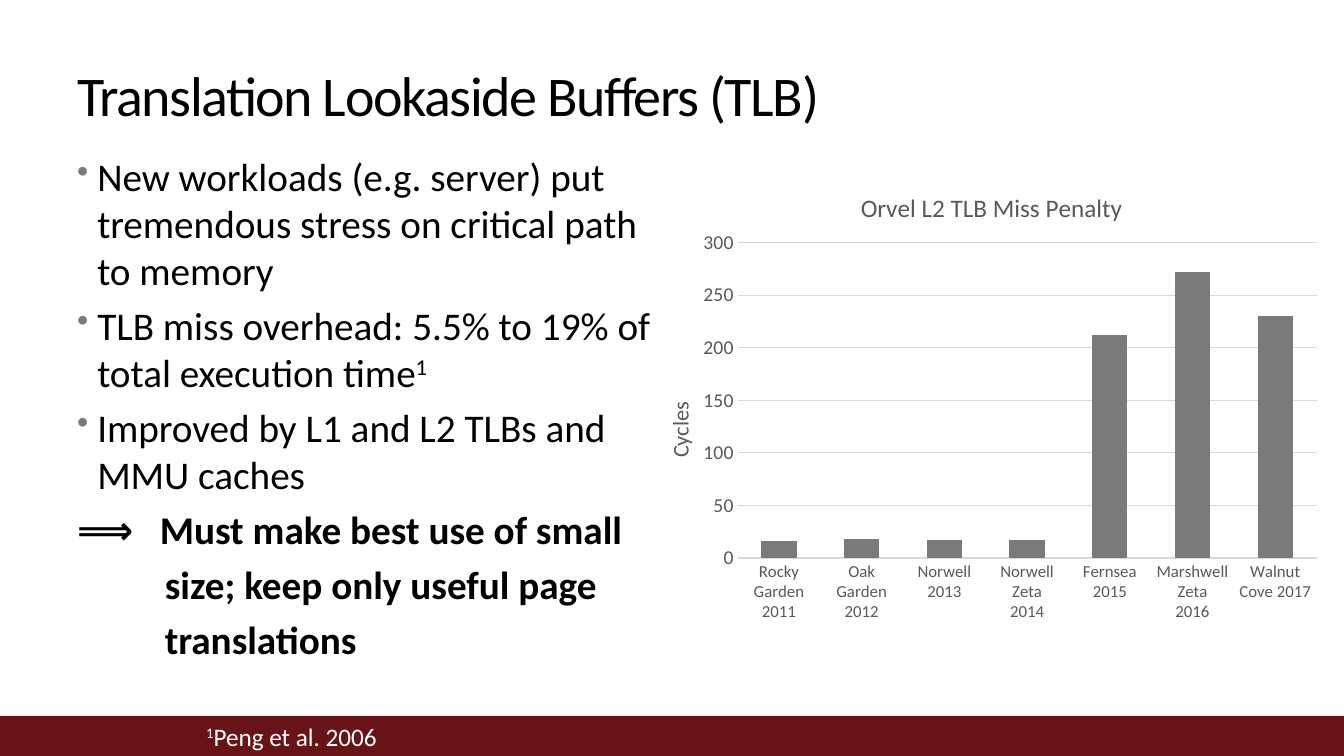
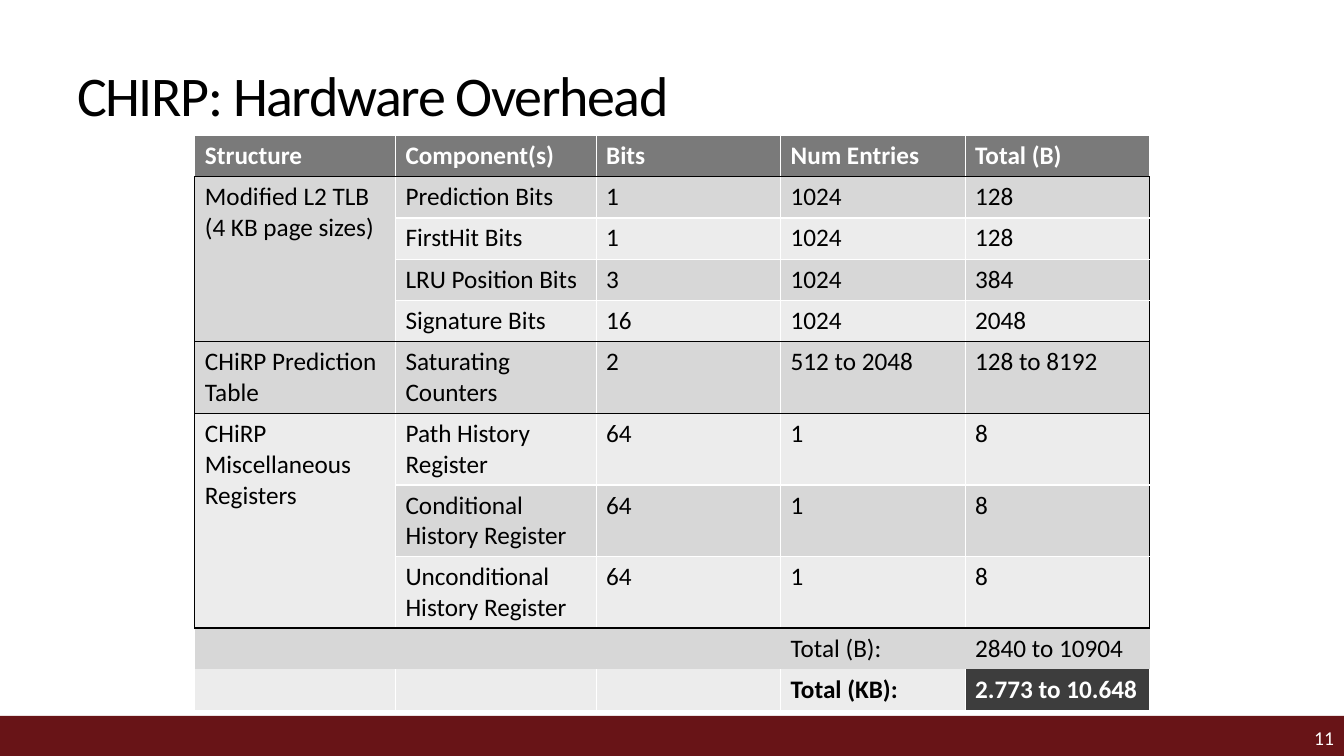
from dataclasses import dataclass

from lxml import etree
from pptx import Presentation
from pptx.chart.data import CategoryChartData
from pptx.dml.color import RGBColor
from pptx.enum.chart import XL_CHART_TYPE, XL_TICK_MARK
from pptx.enum.shapes import MSO_SHAPE
from pptx.enum.text import MSO_ANCHOR, PP_ALIGN
from pptx.oxml.ns import qn
from pptx.util import Inches, Pt

COLUMNS = XL_CHART_TYPE.COLUMN_CLUSTERED
NO_TICK = XL_TICK_MARK.NONE
RECTANGLE = MSO_SHAPE.RECTANGLE
TOP, MIDDLE = MSO_ANCHOR.TOP, MSO_ANCHOR.MIDDLE
LEFT, RIGHT = PP_ALIGN.LEFT, PP_ALIGN.RIGHT
PLAIN_TABLE = "{2D5ABB26-0587-4C30-8999-92F81FD0307C}"


@dataclass(frozen=True)
class Theme:
    font: str = "Calibri"
    ink: str = "000000"
    paper: str = "FFFFFF"
    band: str = "681417"
    grey: str = "7A7A7A"
    dark: str = "3D3D3D"
    stripes: tuple = ("ECECEC", "D7D7D7")
    chart_text: str = "595959"
    chart_line: str = "D9D9D9"
    title_size: int = 40
    body_size: int = 28
    text_size: int = 18
    axis_title_size: int = 16
    value_size: int = 14
    category_size: int = 12


def rgb(value):
    return RGBColor.from_string(value)


def child(parent, tag, **attributes):
    return etree.SubElement(parent, qn(tag), attributes)


class Deck:
    """Style and current slide; positions are percentages of the slide."""

    def __init__(self, theme):
        self.theme = theme
        self.prs = Presentation()
        self.prs.slide_width, self.prs.slide_height = Inches(13.33), Inches(7.5)
        self.slide = None

    def x(self, percent):
        return int(self.prs.slide_width * percent / 100)

    def y(self, percent):
        return int(self.prs.slide_height * percent / 100)

    def frame(self, left, top, width, height):
        return self.x(left), self.y(top), self.x(width), self.y(height)

    def style(self, font, size, color, bold=False):
        font.name, font.size, font.bold = self.theme.font, Pt(size), bold
        font.color.rgb = rgb(color)

    def new_slide(self, title):
        self.slide = self.prs.slides.add_slide(self.prs.slide_layouts[6])
        band = self.slide.shapes.add_shape(RECTANGLE, *self.frame(0, 94.7, 100, 5.3))
        band.shadow.inherit = False
        band.fill.solid()
        band.fill.fore_color.rgb = rgb(self.theme.band)
        band.line.fill.background()
        heading = self.text((5, 5, 92.5, 15), title, self.theme.title_size,
                            self.theme.ink, MIDDLE)
        heading.runs[0].font._element.set("spc", "-100")

    def text_frame(self, place, anchor):
        text_frame = self.slide.shapes.add_textbox(*self.frame(*place)).text_frame
        text_frame.word_wrap = True
        text_frame.vertical_anchor = anchor
        return text_frame

    def add_parts(self, paragraph, parts, size, color, bold=False):
        """Parts are plain strings, or one-item tuples for superscripts."""
        for part in parts:
            raised = isinstance(part, tuple)
            run = paragraph.add_run()
            run.text = part[0] if raised else part
            self.style(run.font, size, color, bold)
            if raised:
                run.font._element.set("baseline", "30000")

    def text(self, place, text, size, color, anchor=TOP, align=LEFT):
        paragraph = self.text_frame(place, anchor).paragraphs[0]
        paragraph.alignment = align
        self.add_parts(paragraph, [text] if isinstance(text, str) else text, size, color)
        return paragraph

    def footer(self, place, text, size, align=LEFT):
        self.text(place, text, size, self.theme.paper, MIDDLE, align)

    # Body text: bulleted points, then a bold conclusion after an arrow
    def body(self, place, points, conclusion):
        theme = self.theme
        text_frame = self.text_frame(place, TOP)
        for i, parts in enumerate(points + conclusion):
            paragraph = text_frame.add_paragraph() if i else text_frame.paragraphs[0]
            properties = paragraph._p.get_or_add_pPr()
            concluding = i >= len(points)
            if not concluding:
                properties.set("marL", str(Inches(0.2)))
                properties.set("indent", str(-Inches(0.2)))
                child(child(properties, "a:buClr"), "a:srgbClr", val=theme.grey)
                child(properties, "a:buSzPct", val="85000")
                child(properties, "a:buChar", char="•")
            elif i == len(points):
                tabs = child(properties, "a:tabLst")
                child(tabs, "a:tab", pos=str(Inches(0.82)), algn="l")
            else:
                properties.set("marL", str(Inches(0.87)))
            if i:
                paragraph.space_before = Pt(theme.body_size * 0.2)
            self.add_parts(paragraph, parts, theme.body_size, theme.ink, concluding)

    # Column chart
    def place_part(self, parent, **shares):
        layout = parent.find(qn("c:layout"))
        if layout is None:
            layout = etree.Element(qn("c:layout"))
            parent.insert(0, layout)
        manual = child(layout, "c:manualLayout")
        if "w" in shares:
            child(manual, "c:layoutTarget", val="inner")
        for axis in "xy":
            child(manual, f"c:{axis}Mode", val="edge")
        for key, share in shares.items():
            child(manual, f"c:{key}", val=str(share))

    def chart_title(self, title, text, size, x, y):
        title.text_frame.text = text
        self.style(title.text_frame.paragraphs[0].runs[0].font, size,
                   self.theme.chart_text)
        self.place_part(title._element, x=x, y=y)

    def chart_line(self, line):
        line.color.rgb = rgb(self.theme.chart_line)
        line.width = Pt(0.75)

    def column_chart(self, place, title, unit, penalties):
        theme = self.theme
        data = CategoryChartData()
        data.categories = list(penalties)
        data.add_series("Series 1", list(penalties.values()))
        chart = self.slide.shapes.add_chart(COLUMNS, *self.frame(*place), data).chart
        self.style(chart.font, 10, theme.ink)
        chart.has_legend = False
        chart.has_title = True
        self.chart_title(chart.chart_title, title, theme.text_size, 0.32, 0.05)
        self.place_part(chart._chartSpace.chart.plotArea, x=0.15, y=0.17, w=0.83, h=0.67)

        plot = chart.plots[0]
        plot.vary_by_categories = False
        plot.gap_width, plot.overlap = 134, -17
        fill = plot.series[0].format.fill
        fill.solid()
        fill.fore_color.rgb = rgb(theme.grey)

        categories, cycles = chart.category_axis, chart.value_axis
        for axis, size in ((categories, theme.category_size), (cycles, theme.value_size)):
            axis.major_tick_mark = axis.minor_tick_mark = NO_TICK
            self.style(axis.tick_labels.font, size, theme.chart_text)
        self.chart_line(categories.format.line)
        self.chart_line(cycles.major_gridlines.format.line)
        cycles.format.line.fill.background()
        cycles.minimum_scale, cycles.maximum_scale, cycles.major_unit = 0, 300, 50
        cycles.has_title = True
        self.chart_title(cycles.axis_title, unit, theme.axis_title_size, 0.04, 0.5)
        turned = cycles.axis_title.text_frame._txBody.bodyPr
        turned.set("rot", "-5400000")
        turned.set("vert", "horz")

    # Table with banded rows and boxed groups
    def cell(self, cell, text, fill, color, bold, borders):
        cell.text_frame.text = text
        for paragraph in cell.text_frame.paragraphs:
            for run in paragraph.runs:
                self.style(run.font, self.theme.text_size, color, bold)
        properties = cell._tc.get_or_add_tcPr()
        for side in "LRTB":
            line = child(properties, f"a:ln{side}", w=str(Pt(1)))
            if borders.get(side):
                child(child(line, "a:solidFill"), "a:srgbClr", val=borders[side])
            else:
                child(line, "a:noFill")
        cell.fill.solid()
        cell.fill.fore_color.rgb = rgb(fill)

    def grouped_table(self, left, top, widths, heights, header, groups, totals):
        theme = self.theme
        rows = [header] + [row for group in groups for row in group] + totals
        starts = [1]
        for group in groups:
            starts.append(starts[-1] + len(group))
        end, last_column = starts[-1], len(header) - 1
        table_frame = self.slide.shapes.add_table(
            len(rows), len(header), self.x(left), self.y(top),
            Inches(sum(widths)), Inches(sum(heights)))
        table = table_frame.table
        table._tbl.tblPr.find(qn("a:tableStyleId")).text = PLAIN_TABLE
        table.first_row = table.horz_banding = False
        for column, width in zip(table.columns, widths):
            column.width = Inches(width)
        for row, height in zip(table.rows, heights):
            row.height = Inches(height)

        def edge(black):
            return theme.ink if black else theme.paper

        for r, row in enumerate(rows):
            grouped = 1 <= r < end
            for c, text in enumerate(row):
                borders = {
                    "L": edge(grouped and c == 0),
                    "R": edge(grouped and c == last_column),
                    "T": edge(r in starts),
                    "B": edge(r + 1 in starts or (grouped and c == 0)),
                }
                if r == end:
                    borders = {"T": theme.ink}
                elif r > end or (grouped and c == 0 and r not in starts):
                    borders["T"] = None
                fill = theme.stripes[r % 2] if r else theme.grey
                grand_total = r == len(rows) - 1
                if grand_total and c == last_column:
                    fill = theme.dark
                light = fill in (theme.grey, theme.dark)
                self.cell(table.cell(r, c), text, fill,
                          theme.paper if light else theme.ink,
                          r == 0 or grand_total, borders)
        for start, group in zip(starts, groups):
            if len(group) > 1:
                table.cell(start, 0).merge(table.cell(start + len(group) - 1, 0))


def main():
    theme = Theme()
    deck = Deck(theme)

    # Miss penalty
    deck.new_slide("Translation Lookaside Buffers (TLB)")
    deck.body(
        (5, 19.5, 45, 71),
        [["New workloads (e.g. server) put tremendous stress on critical path to memory"],
         ["TLB miss overhead: 5.5% to 19% of total execution time", ("1",)],
         ["Improved by L1 and L2 TLBs and MMU caches"]],
        [["⟹\tMust make best use of small"],
         ["size; keep only useful page"],
         ["translations"]])
    deck.column_chart(
        (47.1, 21.5, 51.9, 62.3), "Orvel L2 TLB Miss Penalty", "Cycles",
        {"Rocky Garden\n2011": 16, "Oak Garden\n2012": 18, "Norwell\n2013": 17,
         "Norwell Zeta\n2014": 17, "Fernsea\n2015": 212,
         "Marshwell Zeta\n2016": 272, "Walnut Cove 2017": 230})
    deck.footer((14.6, 94.7, 16.7, 5.3), [("1",), "Peng et al. 2006"], theme.text_size)

    # Hardware overhead
    deck.new_slide("CHIRP: Hardware Overhead")
    one_line, two_lines = 0.41, 0.71
    deck.grouped_table(
        14.5, 17.9, [1.99] * 2 + [1.83] * 3,
        [one_line] * 5 + [two_lines] * 4 + [one_line] * 2,
        ["Structure", "Component(s)", "Bits", "Num Entries", "Total (B)"],
        [[["Modified L2 TLB\n(4 KB page sizes)", "Prediction Bits", "1", "1024", "128"],
          ["", "FirstHit Bits", "1", "1024", "128"],
          ["", "LRU Position Bits", "3", "1024", "384"],
          ["", "Signature Bits", "16", "1024", "2048"]],
         [["CHiRP Prediction Table", "Saturating Counters", "2", "512 to 2048",
           "128 to 8192"]],
         [["CHiRP Miscellaneous\nRegisters", "Path History Register", "64", "1", "8"],
          ["", "Conditional History Register", "64", "1", "8"],
          ["", "Unconditional History Register", "64", "1", "8"]]],
        [["", "", "", "Total (B):", "2840 to 10904"],
         ["", "", "", "Total (KB):", "2.773 to 10.648"]])
    deck.footer((88.3, 95.2, 11.7, 4.8), "11", theme.value_size, RIGHT)

    deck.prs.save("out.pptx")


if __name__ == "__main__":
    main()
